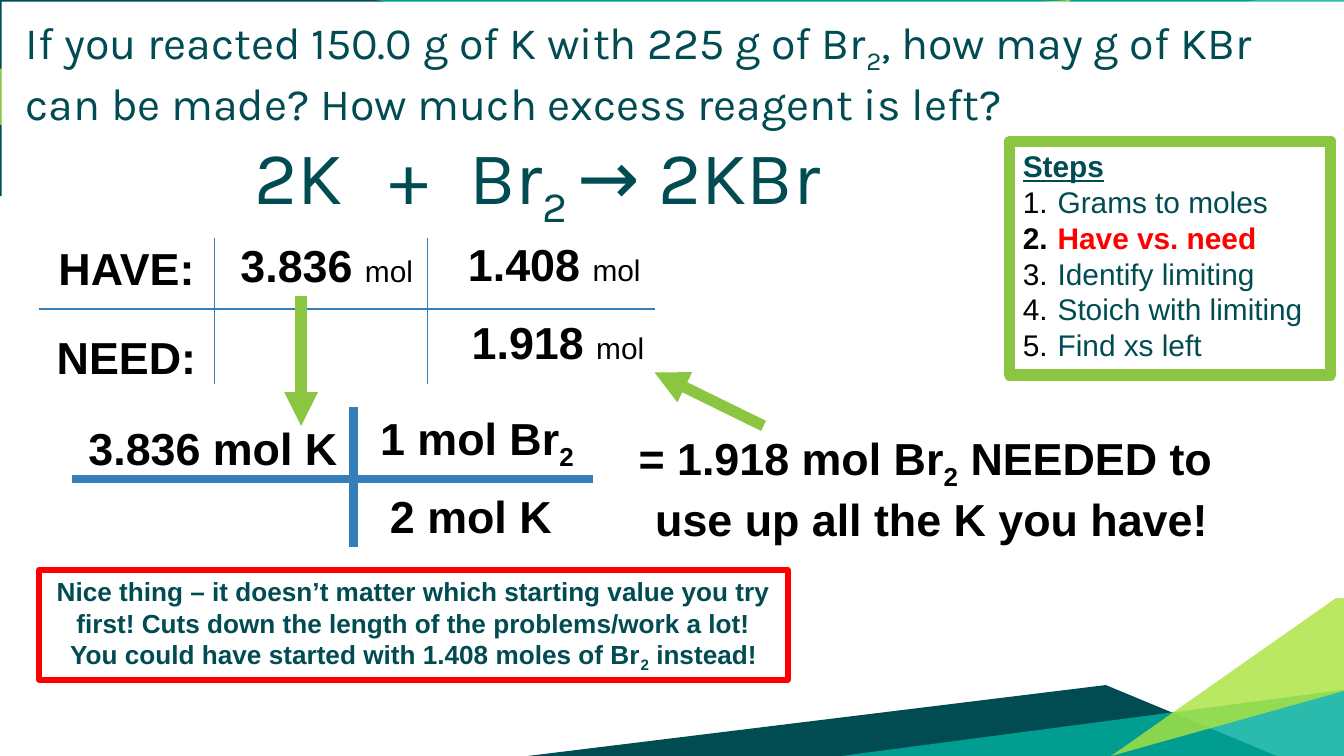
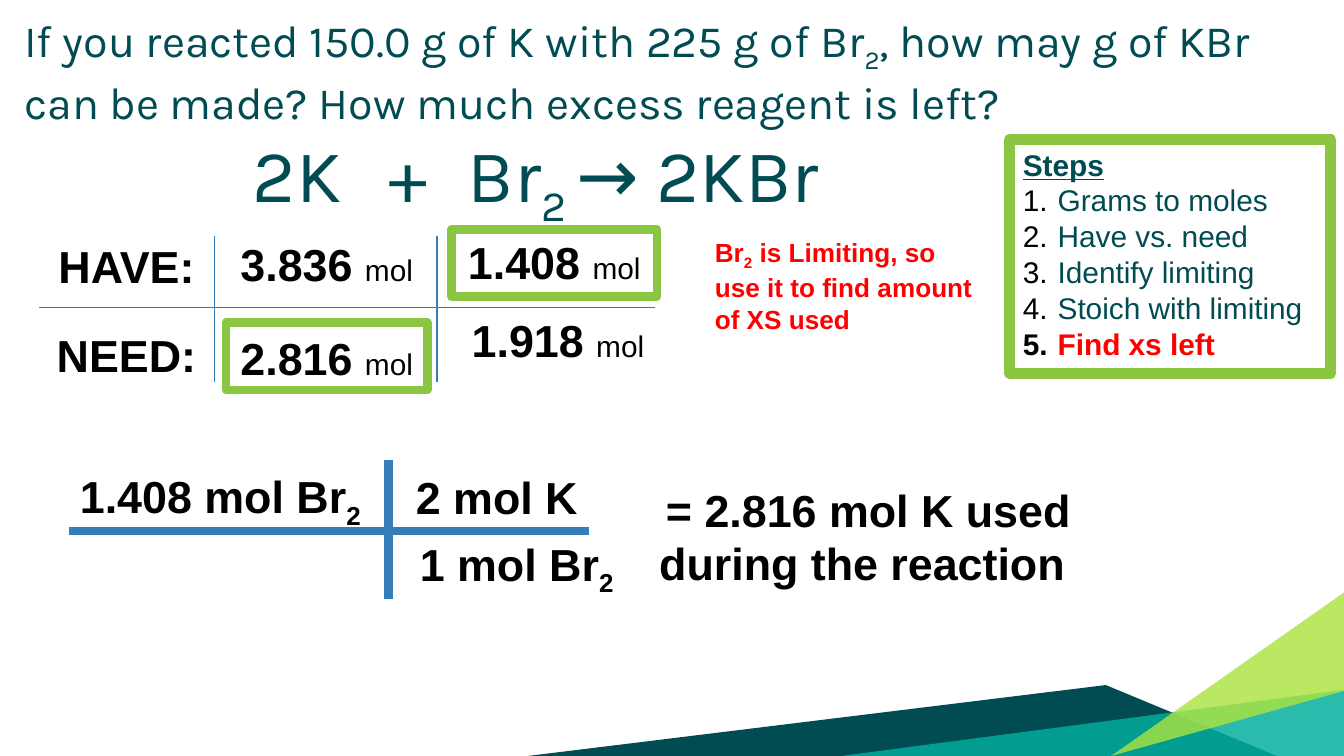
import pptx
import pptx.util
import pptx.dml.color
import pptx.enum.shapes
import pptx.enum.text
import pptx.oxml
from pptx.oxml.ns import qn
from lxml import etree

Cm, Pt = pptx.util.Cm, pptx.util.Pt
ANCHOR = pptx.enum.text.MSO_ANCHOR
ALIGN = pptx.enum.text.PP_ALIGN

COLOURS = {"deep": "004C52", "teal": "00AE9D", "lime": "ABE33F", "green": "8BC642",
           "blue": "367EB9", "red": "FF0000", "black": "000000", "white": "FFFFFF"}

# Text formats: font attributes plus a colour name
FORMATS = {
    "question": {"name": "Karla", "size": Pt(24), "colour": "deep"},
    "equation": {"name": "Karla", "size": Pt(40), "colour": "deep"},
    "value": {"name": "Arial", "size": Pt(24), "bold": True, "colour": "black"},
    "unit": {"name": "Arial", "size": Pt(16), "bold": False, "colour": "black"},
    "heading": {"name": "Arial", "size": Pt(16), "bold": True, "underline": True, "colour": "deep"},
    "step": {"name": "Arial", "size": Pt(16), "bold": False, "colour": "deep"},
    "current": {"name": "Arial", "size": Pt(16), "bold": True, "colour": "red"},
    "note": {"name": "Arial", "size": Pt(14), "bold": True, "colour": "deep"},
    "warning": {"name": "Arial", "size": Pt(14), "bold": True, "colour": "red"},
}

# Shared content; text between ~ marks is subscript, lengths are in cm
QUESTION = [("If you reacted 150.0 g of K with 225 g of Br~2~, how may g of KBr can be made? "
             "How much excess reagent is left?\n", "question"),
            ("\t2K\t+\tBr~2 ~→ 2KBr", "equation")]
EQUATION_TABS = [4.32, 6.88, 8.38]
STEPS = ["Grams to moles", "Have vs. need", "Identify limiting",
         "Stoich with limiting", "Find xs left"]

# Bands: colour, opacity in percent, corners
TOP_BANDS = [
    ("deep", 100, [(0, 0), (0, 3.71), (23.75, 0)]),
    ("teal", 83, [(7.11, 0), (22.23, 3.53), (25.4, 0.71), (25.4, 0)]),
    ("lime", 81, [(0, 1.3), (0, 2.36), (15.37, 4.09), (20.24, 0)]),
]
BOTTOM_BANDS = [
    ("deep", 100, [(9.98, 14.29), (24.13, 14.29), (20.9, 12.95)]),
    ("teal", 83, [(25.4, 13.04), (25.4, 14.29), (15.9, 14.29)]),
    ("lime", 81, [(25.4, 13.06), (25.4, 11.2), (21, 14.29)]),
]

# Have/need grid: text, unit, left, offset from the grid top, width, height
GRID = [
    ("HAVE:", "", 0.74, 0.05, 3.3, 1.17),
    ("NEED:", "", 0.74, 1.73, 3.3, 1.17),
    ("3.836 ", "mol", 4.27, 0, 3.81, 1.17),
    ("1.408 ", "mol", 8.53, -0.05, 3.89, 1.22),
    ("1.918 ", "mol", 8.41, 1.42, 4.27, 1.22),
]

# Per slide: "texts" hold runs, place, outline (colour, points) and alignment
SLIDES = [
    {
        "bands": TOP_BANDS + BOTTOM_BANDS,
        "question": (0.03, 0.03, 25.37, 11.28),
        "steps_top": 2.67, "current": 1,
        "grid_top": 4.42, "grid_divider": 8.08,
        "cross": (1.37, 6.68, 7.7),
        "values": [
            ("3.836 mol K", (1.37, 7.87, 5.31, 1.17)),
            ("1 mol Br~2~", (6.83, 7.75, 4.37, 1.17)),
            ("2 mol K", (6.83, 9.17, 4.14, 1.17)),
            ("= 1.918 mol Br~2~ NEEDED to \nuse up all the K you have!",
             (10.95, 7.11, 13.31, 4.22)),
        ],
        "arrows": [(5.69, 5.59, 5.69, 8.05), (14.43, 8.05, 12.37, 7.04)],
        "note": {
            "runs": [("Nice thing – it doesn’t matter which starting value you try first! "
                      "Cuts down the length of the problems/work a lot! "
                      "You could have started with 1.408 moles of Br~2~ instead!", "note")],
            "place": (0.74, 10.77, 14.15, 2.08), "outline": ("red", 3)},
    },
    {
        "bands": BOTTOM_BANDS,
        "question": (0, 0, 25.4, 4.14),
        "steps_top": 2.64, "current": 4,
        "grid_top": 4.39, "grid_divider": 8.26,
        "cross": (1.3, 7.34, 8.69),
        "frames": [(8.53, 4.34, 3.89, 1.27), (4.27, 6.1, 3.81, 1.27)],
        "extra_cells": [("2.816 ", "mol", 4.27, 1.78, 3.81, 1.17)],
        "values": [
            ("1.408 mol Br~2~", (1.04, 8.86, 6.25, 1.17)),
            ("2 mol K", (7.32, 8.81, 4.14, 1.17)),
            ("1 mol Br~2~", (7.49, 10.13, 4.55, 1.17)),
            ("= 2.816 mol K used during the reaction ", (12.17, 9.55, 8.48, 1.17)),
        ],
        "note": {
            "runs": [("Br~2~ is Limiting, so use it to find amount of XS used", "warning")],
            "place": (13.26, 4.34, 5.51, 2.06),
            "align": ALIGN.LEFT, "anchor": ANCHOR.TOP},
    },
]


def rgb(colour):
    return pptx.dml.color.RGBColor.from_string(COLOURS[colour])


def paint(fill, colour):
    fill.solid()
    fill.fore_color.rgb = rgb(colour)


def write(paragraph, runs):
    """Add formatted runs, with line breaks and subscripts."""
    for text, style in runs:
        for index, part in enumerate(text.split("~")):
            for line_index, line in enumerate(part.split("\n")):
                if line_index:
                    paragraph.add_line_break()
                if not line:
                    continue
                run = paragraph.add_run()
                run.text = line
                for attribute, value in FORMATS[style].items():
                    if attribute == "colour":
                        run.font.color.rgb = rgb(value)
                    else:
                        setattr(run.font, attribute, value)
                if index % 2:
                    run._r.get_or_add_rPr().set("baseline", "-25000")


def add_tabs(paragraph, stops):
    tab_list = etree.SubElement(paragraph._p.get_or_add_pPr(), qn("a:tabLst"))
    for stop in stops:
        etree.SubElement(tab_list, qn("a:tab"), pos=str(Cm(stop)), algn="l")


def add_number(paragraph):
    properties = paragraph._p.get_or_add_pPr()
    properties.set("marL", str(Cm(0.66)))
    properties.set("indent", str(Cm(-0.66)))
    colour = etree.SubElement(properties, qn("a:buClr"))
    etree.SubElement(colour, qn("a:srgbClr"), val=COLOURS["black"])
    etree.SubElement(properties, qn("a:buFont"), typeface="Arial")
    etree.SubElement(properties, qn("a:buAutoNum"), type="arabicPeriod")


def add_box(slide, place, runs=(), fill=None, outline=None,
            align=ALIGN.CENTER, anchor=ANCHOR.MIDDLE):
    lengths = [Cm(value) for value in place]
    if fill or outline:
        shape = slide.shapes.add_shape(pptx.enum.shapes.MSO_SHAPE.RECTANGLE, *lengths)
        shape.shadow.inherit = False
        if fill:
            paint(shape.fill, fill)
        else:
            shape.fill.background()
        if outline:
            paint(shape.line.fill, outline[0])
            shape.line.width = Pt(outline[1])
            etree.SubElement(shape.line._get_or_add_ln(), qn("a:round"))
        else:
            shape.line.fill.background()
    else:
        shape = slide.shapes.add_textbox(*lengths)
    frame = shape.text_frame
    frame.word_wrap = True
    frame.vertical_anchor = anchor
    frame.paragraphs[0].alignment = align
    write(frame.paragraphs[0], runs)
    return frame


def add_line(slide, ends, colour, width, arrow=False):
    line = slide.shapes.add_connector(pptx.enum.shapes.MSO_CONNECTOR.STRAIGHT,
                                      *[Cm(value) for value in ends])
    paint(line.line.fill, colour)
    line.line.width = Pt(width)
    if arrow:
        etree.SubElement(line.line._get_or_add_ln(), qn("a:tailEnd"), type="triangle")
    etree.SubElement(line._element.spPr, qn("a:effectLst"))


def add_band(slide, colour, opacity, corners):
    points = [(Cm(x), Cm(y)) for x, y in corners]
    builder = slide.shapes.build_freeform(*points[0])
    builder.add_line_segments(points[1:], close=True)
    band = builder.convert_to_shape()
    band.shadow.inherit = False
    paint(band.fill, colour)
    band.line.fill.background()
    if opacity < 100:
        solid = band._element.spPr.find(qn("a:solidFill"))
        etree.SubElement(solid[0], qn("a:alpha"), val=str(opacity * 1000))


def add_question(slide, place):
    frame = add_box(slide, place, QUESTION, fill="white", align=ALIGN.LEFT, anchor=ANCHOR.TOP)
    margins = {"margin_left": 0.46, "margin_top": 0.25, "margin_right": 0.5, "margin_bottom": 0.25}
    for side, value in margins.items():
        setattr(frame, side, Cm(value))
    frame.paragraphs[0].space_before = Pt(6)
    add_tabs(frame.paragraphs[0], EQUATION_TABS)


def add_steps(slide, top, current):
    frame = add_box(slide, (19.08, top, 6.07, 4.42), [("Steps\t", "heading")], fill="white",
                    outline=("green", 6), align=ALIGN.LEFT, anchor=ANCHOR.TOP)
    add_tabs(frame.paragraphs[0], [4.5])
    for index, step in enumerate(STEPS):
        paragraph = frame.add_paragraph()
        paragraph.alignment = ALIGN.LEFT
        add_number(paragraph)
        write(paragraph, [(step, "current" if index == current else "step")])


def add_grid(slide, top, divider, cells):
    add_line(slide, (0.74, top + 1.42, 12.37, top + 1.42), "blue", 0.75)
    for x in (4.06, divider):
        add_line(slide, (x, top + 0.08, x, top + 2.84), "blue", 0.75)
    for value, unit, left, offset, width, height in cells:
        add_box(slide, (left, top + offset, width, height), [(value, "value"), (unit, "unit")])


def add_cross(slide, left, middle, top):
    add_line(slide, (middle, top, middle, top + 2.64), "blue", 4.5)
    add_line(slide, (left, top + 1.35, left + 9.84, top + 1.35), "blue", 4.5)


def main():
    presentation = pptx.Presentation()
    presentation.slide_width, presentation.slide_height = Cm(25.4), Cm(14.29)
    for content in SLIDES:
        slide = presentation.slides.add_slide(presentation.slide_layouts[6])
        # Background and shared parts
        for band in content["bands"]:
            add_band(slide, *band)
        add_question(slide, content["question"])
        add_steps(slide, content["steps_top"], content["current"])
        # Have/need comparison
        add_grid(slide, content["grid_top"], content["grid_divider"],
                 GRID + content.get("extra_cells", []))
        for place in content.get("frames", []):
            add_box(slide, place, outline=("green", 4.5))
        # Conversion and its result
        add_cross(slide, *content["cross"])
        for text, place in content["values"]:
            add_box(slide, place, [(text, "value")])
        for ends in content.get("arrows", []):
            add_line(slide, ends, "green", 6, arrow=True)
        add_box(slide, **content["note"])
    presentation.save("out.pptx")


if __name__ == "__main__":
    main()
